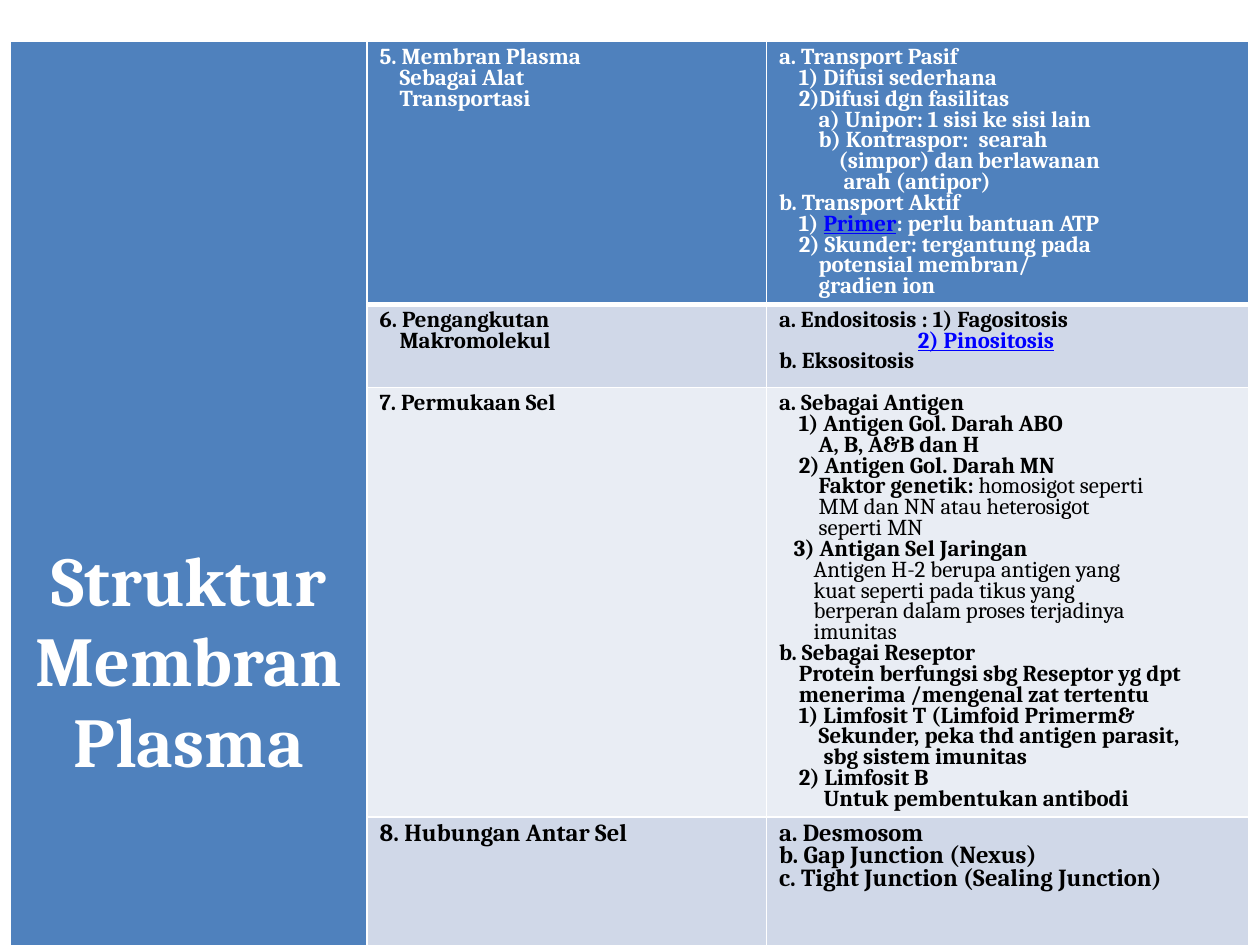
from lxml import etree
from pptx import Presentation
from pptx.dml.color import RGBColor
from pptx.enum.text import MSO_ANCHOR as Anchor, PP_ALIGN as Align
from pptx.oxml.ns import qn
from pptx.util import Cm, Pt

WHITE, BLACK, BLUE = "FFFFFF", "000000", "0000FF"
HEADER, BAND_DARK, BAND_LIGHT = "4F81BD", "D0D8E8", "E9EDF4"
INDENT_STEP = 0.1  # cm per indent unit


def add_span(para, text, size=13, color=BLACK, bold=True, underline=False):
    span = para.add_run()
    span.text = text
    font = span.font
    font.name, font.size, font.bold, font.underline = "Cambria", Pt(size), bold, underline
    font.color.rgb = RGBColor.from_string(color)


def style_cell(cell, fill, bottom=1):
    cell.fill.solid()
    cell.fill.fore_color.rgb = RGBColor.from_string(fill)
    props = cell._tc.get_or_add_tcPr()
    widths = {"lnL": 1, "lnR": 1, "lnT": 1, "lnB": bottom}
    for place, (side, width) in enumerate(widths.items()):
        line = etree.Element(qn(f"a:{side}"), w=str(Pt(width)))
        solid = etree.SubElement(line, qn("a:solidFill"))
        etree.SubElement(solid, qn("a:srgbClr"), val=WHITE)
        props.insert(place, line)


LINK = {"color": BLUE, "underline": True}
PLAIN = {"bold": False}

# Each line: indent units, then text or (text, format) spans
transport_topic = [(0, "5. Membran Plasma"), (4, "Sebagai Alat"), (4, "Transportasi")]
transport = [
    (0, "a. Transport Pasif"),
    (4, "1) Difusi sederhana"),
    (4, "2)Difusi dgn fasilitas"),
    (8, "a) Unipor: 1 sisi ke sisi lain"),
    (8, "b) Kontraspor:  searah"),
    (12, "(simpor) dan berlawanan"),
    (13, "arah (antipor)"),
    (0, "b. Transport Aktif"),
    (4, "1) ", ("Primer", LINK), ": perlu bantuan ATP"),
    (4, "2) Skunder: tergantung pada"),
    (8, "potensial membran/"),
    (8, "gradien ion"),
]
macromolecule_topic = [(0, "6. Pengangkutan"), (4, "Makromolekul")]
macromolecule = [
    ("list", "Endositosis : 1) Fagositosis"),
    (28, ("2) Pinositosis", LINK)),
    (0, "b. Eksositosis"),
]
surface = [
    (0, "a. Sebagai Antigen"),
    (4, "1) Antigen Gol. Darah ABO"),
    (8, "A, B, A&B dan H"),
    (4, "2) Antigen Gol. Darah MN"),
    (8, "Faktor genetik: ", ("homosigot seperti", PLAIN)),
    (8, ("MM dan NN atau heterosigot", PLAIN)),
    (8, ("seperti MN", PLAIN)),
    (3, "3) Antigan Sel Jaringan"),
    (7, ("Antigen H-2 berupa antigen yang", PLAIN)),
    (7, ("kuat seperti pada tikus yang", PLAIN)),
    (7, ("berperan dalam proses terjadinya", PLAIN)),
    (7, ("imunitas", PLAIN)),
    (0, "b. Sebagai Reseptor"),
    (4, "Protein berfungsi sbg Reseptor yg dpt"),
    (4, "menerima /mengenal zat tertentu"),
    (4, "1) Limfosit T (Limfoid Primerm&"),
    (8, "Sekunder, peka thd antigen parasit,"),
    (9, "sbg sistem imunitas"),
    (4, "2) Limfosit B"),
    (9, "Untuk pembentukan antibodi"),
]
junction = [(0, "a. Desmosom"), (0, "b. Gap Junction (Nexus)"),
            (0, "c. Tight Junction (Sealing Junction)")]

# Height in cm, fill, text colour, text size, bottom border, topic, details
rows = [
    (5.27, HEADER, WHITE, 13, 3, transport_topic, transport),
    (1.68, BAND_DARK, BLACK, 13, 1, macromolecule_topic, macromolecule),
    (8.65, BAND_LIGHT, BLACK, 13, 1, [(0, "7. Permukaan Sel")], surface),
    (2.84, BAND_DARK, BLACK, 14, 1, [(0, "8. Hubungan Antar Sel")], junction),
]

# Page
deck = Presentation()
deck.slide_width, deck.slide_height = Cm(25.4), Cm(19.05)
page = deck.slides.add_slide(deck.slide_layouts[6])

# Table
table = page.shapes.add_table(len(rows), 3, Cm(0.21), Cm(0.84), Cm(24.97), Cm(18.44)).table
for column, width in zip(table.columns, (7.19, 8.05, 9.73)):
    column.width = Cm(width)

# Topic and detail columns
for index, (height, fill, color, size, bottom, topic, details) in enumerate(rows):
    table.rows[index].height = Cm(height)
    style_cell(table.cell(index, 0), HEADER)
    for column, lines in ((1, topic), (2, details)):
        cell = table.cell(index, column)
        style_cell(cell, fill, bottom)
        frame = cell.text_frame
        for number, (indent, *spans) in enumerate(lines):
            para = frame.add_paragraph() if number else frame.paragraphs[0]
            para.line_spacing = 0.8
            props = para._p.get_or_add_pPr()
            if indent == "list":
                props.set("marL", str(Cm(0.44)))
                props.set("indent", str(Cm(-0.44)))
                etree.SubElement(props, qn("a:buAutoNum"), type="alphaLcPeriod")
            elif indent:
                props.set("marL", str(Cm(indent * INDENT_STEP)))
            for span in spans:
                text, extra = (span, {}) if isinstance(span, str) else span
                add_span(para, text, **{"size": size, "color": color, **extra})

# Merged heading column
heading = table.cell(0, 0)
heading.merge(table.cell(len(rows) - 1, 0))
heading.vertical_anchor = Anchor.MIDDLE
heading.margin_top = Cm(2.3)
for number, text in enumerate(("Struktur", "Membran Plasma")):
    frame = heading.text_frame
    para = frame.add_paragraph() if number else frame.paragraphs[0]
    para.alignment = Align.CENTER
    add_span(para, text, size=40, color=WHITE)

deck.save("out.pptx")
